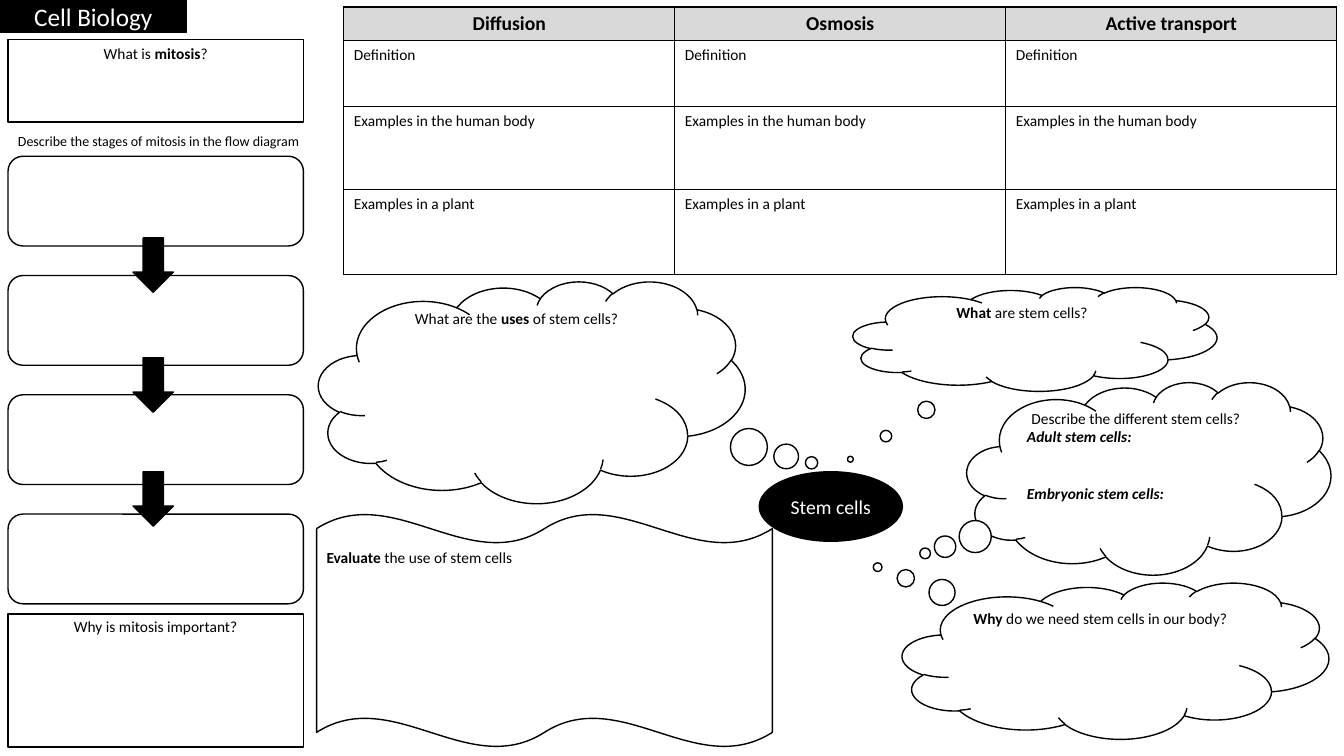
from lxml import etree
from pptx import Presentation
from pptx.dml.color import RGBColor
from pptx.enum.shapes import MSO_SHAPE as SHAPE
from pptx.enum.text import MSO_ANCHOR as ANCHOR, PP_ALIGN as ALIGN
from pptx.oxml.ns import qn
from pptx.util import Inches, Pt

COLORS = {"black": "000000", "white": "FFFFFF", "header": "D9D9D9"}
FONT = "Calibri"


def rgb(name):
    return RGBColor.from_string(COLORS[name])


def write(tf, text, size=11, color="black", bold=False, italic=False,
          align=ALIGN.CENTER, before=0):
    """Add a paragraph; parts between asterisks are bold."""
    p = tf.paragraphs[0]
    if p.runs:
        p = tf.add_paragraph()
    p.alignment = align
    p.space_before = Pt(before)
    for i, part in enumerate(text.split("*")):
        if not part:
            continue
        r = p.add_run()
        r.text = part
        r.font.name = FONT
        r.font.size = Pt(size)
        r.font.bold = bold or i % 2 == 1
        r.font.italic = italic
        r.font.color.rgb = rgb(color)


class Worksheet:
    def __init__(self, prs):
        self.s = prs.slides.add_slide(prs.slide_layouts[6])

    def shape(self, kind, x, y, w, h, fill="white", adj=()):
        sp = self.s.shapes.add_shape(kind, Inches(x), Inches(y), Inches(w), Inches(h))
        sp.shadow.inherit = False
        sp.fill.solid()
        sp.fill.fore_color.rgb = rgb(fill)
        sp.line.color.rgb = rgb("black")
        sp.line.width = Pt(1)
        for i, value in enumerate(adj):
            sp.adjustments[i] = value
        return sp

    def label(self, kind, x, y, w, h, text, size):
        """White text centred on a black shape."""
        tf = self.shape(kind, x, y, w, h, "black").text_frame
        tf.vertical_anchor = ANCHOR.MIDDLE
        write(tf, text, size, "white")

    def prompt(self, kind, x, y, w, h, text, top, adj=(), align=ALIGN.CENTER):
        """Outline with a question at its top and room for an answer."""
        tf = self.shape(kind, x, y, w, h, adj=adj).text_frame
        tf.word_wrap = True
        tf.vertical_anchor = ANCHOR.TOP
        tf.margin_top = Inches(top)
        tf.margin_bottom = 0
        write(tf, text, align=align)
        return tf

    def caption(self, x, y, w, h, text, size):
        tf = self.s.shapes.add_textbox(Inches(x), Inches(y), Inches(w), Inches(h)).text_frame
        tf.word_wrap = True
        write(tf, text, size, align=ALIGN.LEFT)

    def table(self, x, y, col_width, row_heights, rows):
        n = len(rows[0])
        tbl = self.s.shapes.add_table(len(rows), n, Inches(x), Inches(y),
                                      Inches(col_width * n), Inches(sum(row_heights))).table
        for col in tbl.columns:
            col.width = Inches(col_width)
        for i, (height, row) in enumerate(zip(row_heights, rows)):
            tbl.rows[i].height = Inches(height)
            for j, text in enumerate(row):
                self.cell(tbl.cell(i, j), text, header=i == 0)

    def cell(self, cell, text, header):
        tcPr = cell._tc.get_or_add_tcPr()
        for side in ("lnL", "lnR", "lnT", "lnB"):
            ln = etree.SubElement(tcPr, qn(f"a:{side}"), w=str(Pt(1)))
            fill = etree.SubElement(ln, qn("a:solidFill"))
            etree.SubElement(fill, qn("a:srgbClr"), val=COLORS["black"])
        if header:
            cell.fill.solid()
            cell.fill.fore_color.rgb = rgb("header")
            write(cell.text_frame, text, 14, bold=True)
        else:
            cell.fill.background()
            write(cell.text_frame, text, align=ALIGN.LEFT)


def add_mitosis(ws):
    x, w = 0.08, 2.93
    ws.label(SHAPE.RECTANGLE, 0, 0, 1.85, 0.32, "Cell Biology", 18)
    for i in range(4):
        ws.shape(SHAPE.ROUNDED_RECTANGLE, x, 1.55 + i * 3.55 / 3, w, 0.89)
    for y in (2.36, 3.55, 4.68):
        ws.shape(SHAPE.DOWN_ARROW, 1.32, y, 0.4, 0.54, "black")
    ws.prompt(SHAPE.RECTANGLE, x, 0.39, w, 0.82, "What is *mitosis*?", 0.05)
    ws.prompt(SHAPE.RECTANGLE, x, 6.09, w, 1.32, "Why is mitosis important?", 0.03)
    ws.caption(x, 1.27, 3.1, 0.27, "Describe the stages of mitosis in the flow diagram", 10)


def add_transport(ws):
    prompts = ("Definition", "Examples in the human body", "Examples in a plant")
    rows = [("Diffusion", "Osmosis", "Active transport")] + [(p,) * 3 for p in prompts]
    ws.table(3.41, 0.07, 9.85 / 3, (0.33, 0.65, 0.83, 0.84), rows)


def add_stem_cells(ws):
    cloud = SHAPE.CLOUD_CALLOUT
    ws.label(SHAPE.OVAL, 7.53, 4.68, 1.42, 0.69, "Stem cells", 14)
    ws.prompt(cloud, 8.46, 2.85, 3.61, 1.03, "*What* are stem cells?", 0, (-0.507, 1.157))
    ws.prompt(cloud, 8.95, 5.78, 4.23, 1.55, "*Why* do we need stem cells in our body?",
              0.03, (-0.558, -0.599))
    ws.prompt(cloud, 3.16, 2.79, 4.23, 2.2, "What are the *uses* of stem cells?",
              -0.06, (0.656, 0.319))
    ws.prompt(SHAPE.DOUBLE_WAVE, 3.14, 5.1, 4.52, 2.31, "*Evaluate* the use of stem cells",
              0.05, align=ALIGN.LEFT)
    tf = ws.prompt(cloud, 9.59, 3.79, 3.61, 1.91, "Describe the different stem cells?",
                   -0.02, (-0.615, 0.39))
    for text, before in (("Adult stem cells:", 0), ("Embryonic stem cells:", 27)):
        write(tf, text, bold=True, italic=True, align=ALIGN.LEFT, before=before)


def main():
    prs = Presentation()
    prs.slide_width, prs.slide_height = Inches(13.33), Inches(7.5)
    ws = Worksheet(prs)
    add_mitosis(ws)
    add_transport(ws)
    add_stem_cells(ws)
    prs.save("out.pptx")


if __name__ == "__main__":
    main()
